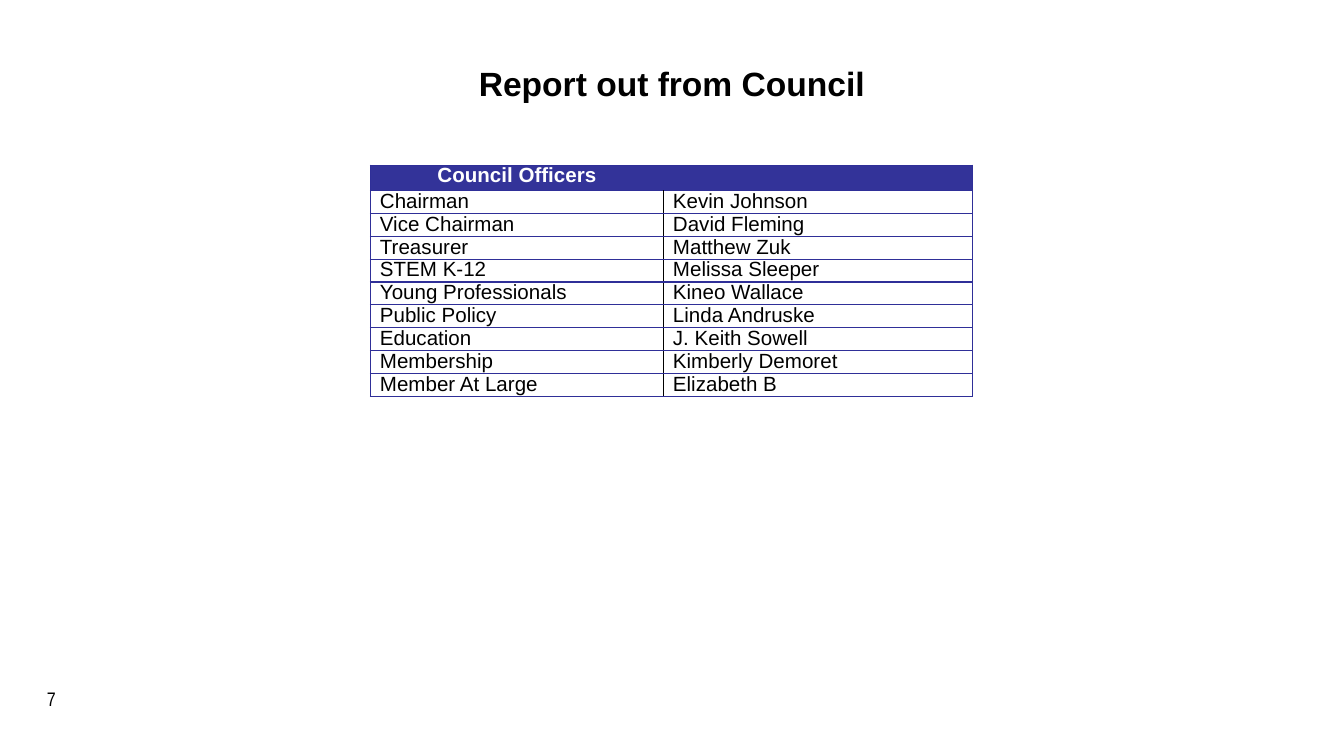
from lxml.etree import SubElement
from pptx import Presentation
from pptx.dml.color import RGBColor as RGB
from pptx.enum.text import MSO_ANCHOR as Anchor, PP_ALIGN as Align
from pptx.oxml.ns import qn
from pptx.util import Pt

# Content
TITLE = "Report out from Council"
PAGE_NUMBER = "7"
HEADER = ("Council Officers", "")
OFFICERS = [
    ("Chairman", "Kevin Johnson"),
    ("Vice Chairman", "David Fleming"),
    ("Treasurer", "Matthew Zuk"),
    ("STEM K-12", "Melissa Sleeper"),
    ("Young Professionals ", "Kineo Wallace"),
    ("Public Policy", "Linda Andruske"),
    ("Education", "J. Keith Sowell"),
    ("Membership", "Kimberly Demoret"),
    ("Member At Large", "Elizabeth B"),
]

# Theme and layout, in points
THEME = {
    "font": "Arial", "number_font": "Arial Narrow",
    "title": 18, "table": 11, "number": 10.5,
    "black": "000000", "white": "FFFFFF", "header": "333399", "rule": "2F2F98",
}
TABLE_LEFT, TABLE_TOP = 198.5, 88.5
COLUMN_WIDTHS = (157, 165.6)
ROW_HEIGHT = 12.25
CELL_INSET = 5.04


def write(frame, text, size, color="black", font="font", bold=False,
          align=Align.LEFT, spacing=None):
    paragraph = frame.paragraphs[0]
    paragraph.alignment = align
    if spacing:
        paragraph.line_spacing = spacing
    if not text:  # an empty cell still needs its type size
        SubElement(paragraph._p, qn("a:endParaRPr"), sz=str(THEME[size] * 100))
        return
    run = paragraph.add_run()
    run.text = text
    run.font.name = THEME[font]
    run.font.size = Pt(THEME[size])
    run.font.bold = bold
    run.font.color.rgb = RGB.from_string(THEME[color])


def set_borders(cell, borders):
    properties = cell._tc.get_or_add_tcPr()
    for index, (side, (color, width)) in enumerate(borders.items()):
        line = properties.makeelement(qn(f"a:ln{side}"), {"w": str(Pt(width))})
        if color:
            fill = SubElement(line, qn("a:solidFill"))
            SubElement(fill, qn("a:srgbClr"), val=THEME[color])
        else:
            SubElement(line, qn("a:noFill"))
        properties.insert(index, line)


presentation = Presentation()
presentation.slide_width, presentation.slide_height = Pt(720), Pt(405)
slide = presentation.slides.add_slide(presentation.slide_layouts[5])

# Title
title = slide.shapes.title
title.left, title.top, title.width, title.height = Pt(54), Pt(24.5), Pt(612), Pt(40.5)
title.text_frame.vertical_anchor = Anchor.MIDDLE
write(title.text_frame, TITLE, "title", bold=True, align=Align.CENTER)

# Officers table
rows = [HEADER, *OFFICERS]
officers = slide.shapes.add_table(
    len(rows), len(COLUMN_WIDTHS), Pt(TABLE_LEFT), Pt(TABLE_TOP),
    Pt(sum(COLUMN_WIDTHS)), Pt(ROW_HEIGHT * len(rows))).table
for column, width in zip(officers.columns, COLUMN_WIDTHS):
    column.width = Pt(width)

outer = ("rule", 0.75)
for r, row in enumerate(rows):
    is_header = r == 0
    officers.rows[r].height = Pt(ROW_HEIGHT)
    divider = (None, 0) if is_header else ("black", 1)
    for c, text in enumerate(row):
        cell = officers.cell(r, c)
        cell.margin_left = cell.margin_right = Pt(CELL_INSET)
        cell.margin_top = cell.margin_bottom = 0
        write(cell.text_frame, text, "table", spacing=0.97, bold=is_header,
              color="white" if is_header else "black",
              align=Align.CENTER if is_header else Align.LEFT)
        if is_header:
            cell.fill.solid()
            cell.fill.fore_color.rgb = RGB.from_string(THEME["header"])
        else:
            cell.fill.background()
        set_borders(cell, {"L": divider if c else outer,
                           "R": outer if c else divider,
                           "T": outer, "B": outer})

# Page number
number = slide.shapes.add_textbox(Pt(18), Pt(364.5), Pt(72), Pt(13.5))
number.text_frame.word_wrap = True
write(number.text_frame, PAGE_NUMBER, "number", font="number_font")

presentation.save("out.pptx")
